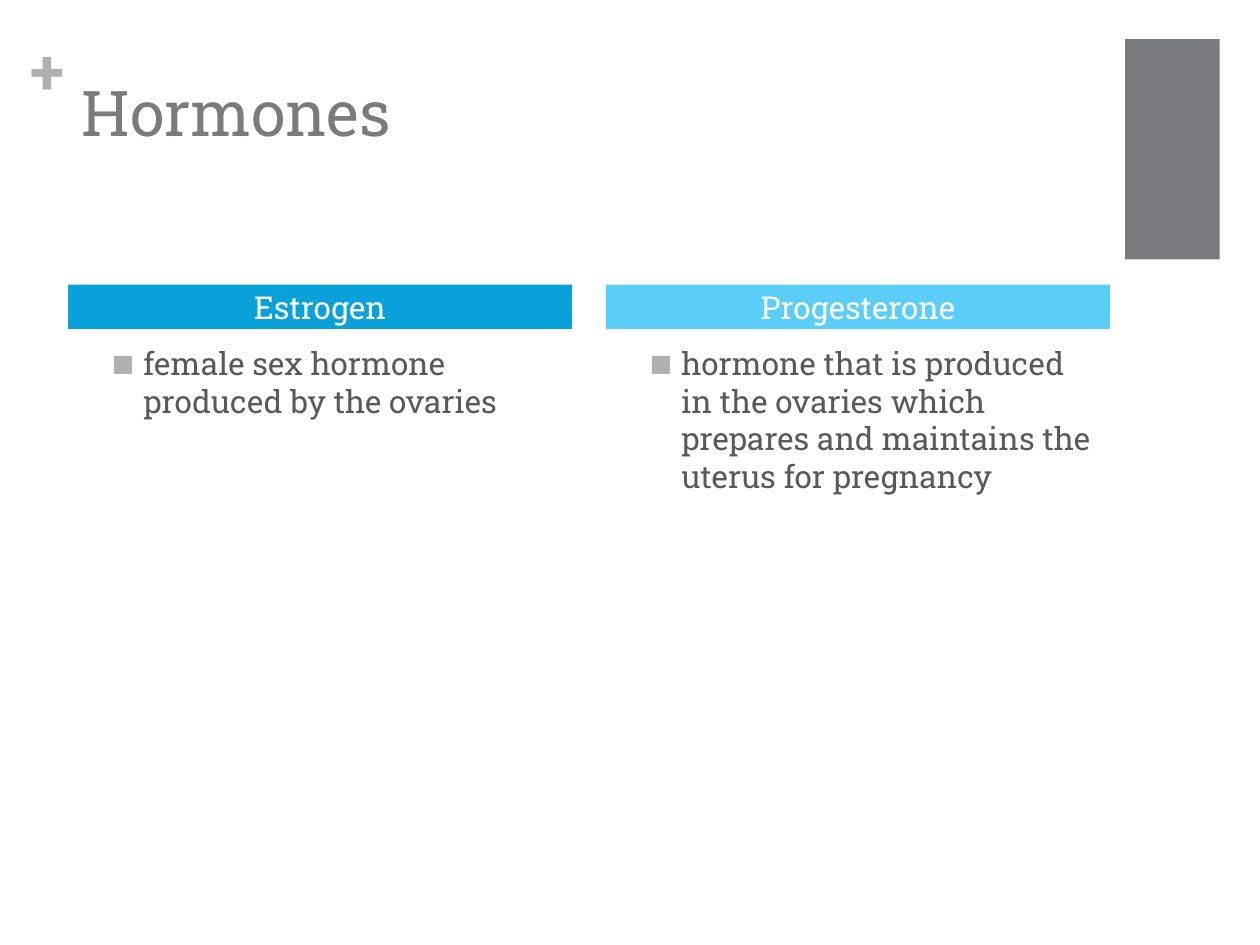
from lxml import etree
from pptx import Presentation
from pptx.dml.color import RGBColor
from pptx.enum.shapes import MSO_SHAPE
from pptx.enum.text import MSO_ANCHOR, PP_ALIGN
from pptx.oxml.ns import qn
from pptx.util import Inches, Pt

FONT = "Roboto Slab"
GRAY = RGBColor(0x79, 0x7B, 0x7E)
LIGHT_GRAY = RGBColor(0xAF, 0xB0, 0xB2)
TEXT_GRAY = RGBColor(0x59, 0x59, 0x59)
BLUE = RGBColor(0x08, 0xA1, 0xD9)
SKY = RGBColor(0x5A, 0xCE, 0xF9)
WHITE = RGBColor(0xFF, 0xFF, 0xFF)

COLUMNS = [
    (0.54, "Estrogen", BLUE, "female sex hormone produced by the ovaries"),
    (4.81, "Progesterone", SKY,
     "hormone that is produced in the ovaries which prepares and maintains "
     "the uterus for pregnancy"),
]


def add_bar(left, top, width, height, color):
    s = slide.shapes.add_shape(MSO_SHAPE.RECTANGLE, Inches(left), Inches(top),
                               Inches(width), Inches(height))
    s.shadow.inherit = False
    s.fill.solid()
    s.fill.fore_color.rgb = color
    s.line.fill.background()
    return s


def write(tf, text, size, color, align=PP_ALIGN.LEFT, bold=False):
    tf.text = text
    p = tf.paragraphs[0]
    p.alignment = align
    font = p.runs[0].font
    font.name, font.size, font.bold = FONT, Pt(size), bold
    font.color.rgb = color
    return p


prs = Presentation()
prs.slide_width, prs.slide_height = Inches(10), Inches(7.5)
slide = prs.slides.add_slide(prs.slide_layouts[5])

title = slide.shapes.title
title.left, title.top = Inches(0.55), Inches(0.53)
title.width, title.height = Inches(8.26), Inches(1.22)
title.text_frame.vertical_anchor = MSO_ANCHOR.TOP
write(title.text_frame, "Hormones", 36, GRAY)

add_bar(8.93, 0.31, 0.75, 1.75, GRAY)

plus = slide.shapes.add_textbox(Inches(0.24), Inches(0.25), Inches(0.29), Inches(0.61))
tf = plus.text_frame
tf.margin_left = tf.margin_right = tf.margin_top = tf.margin_bottom = 0
tf.word_wrap = True
write(tf, "+", 36, LIGHT_GRAY, bold=True)

for left, heading, color, definition in COLUMNS:
    bar = add_bar(left, 2.26, 4, 0.35, color)
    tf = bar.text_frame
    tf.margin_top = tf.margin_bottom = 0
    tf.vertical_anchor = MSO_ANCHOR.MIDDLE
    write(tf, heading, 18, WHITE, PP_ALIGN.CENTER)

    body = slide.shapes.add_textbox(Inches(left), Inches(2.68), Inches(4), Inches(4.02))
    body.text_frame.word_wrap = True
    p = write(body.text_frame, definition, 18, TEXT_GRAY)
    pPr = p._p.get_or_add_pPr()
    pPr.set("marL", str(Inches(0.5)))
    pPr.set("indent", str(Inches(-0.25)))
    bullet_color = etree.SubElement(pPr, qn("a:buClr"))
    etree.SubElement(bullet_color, qn("a:srgbClr"), val=str(LIGHT_GRAY))
    etree.SubElement(pPr, qn("a:buSzPct"), val="75000")
    etree.SubElement(pPr, qn("a:buFont"), typeface=FONT)
    etree.SubElement(pPr, qn("a:buChar"), char="■")

prs.save("out.pptx")
